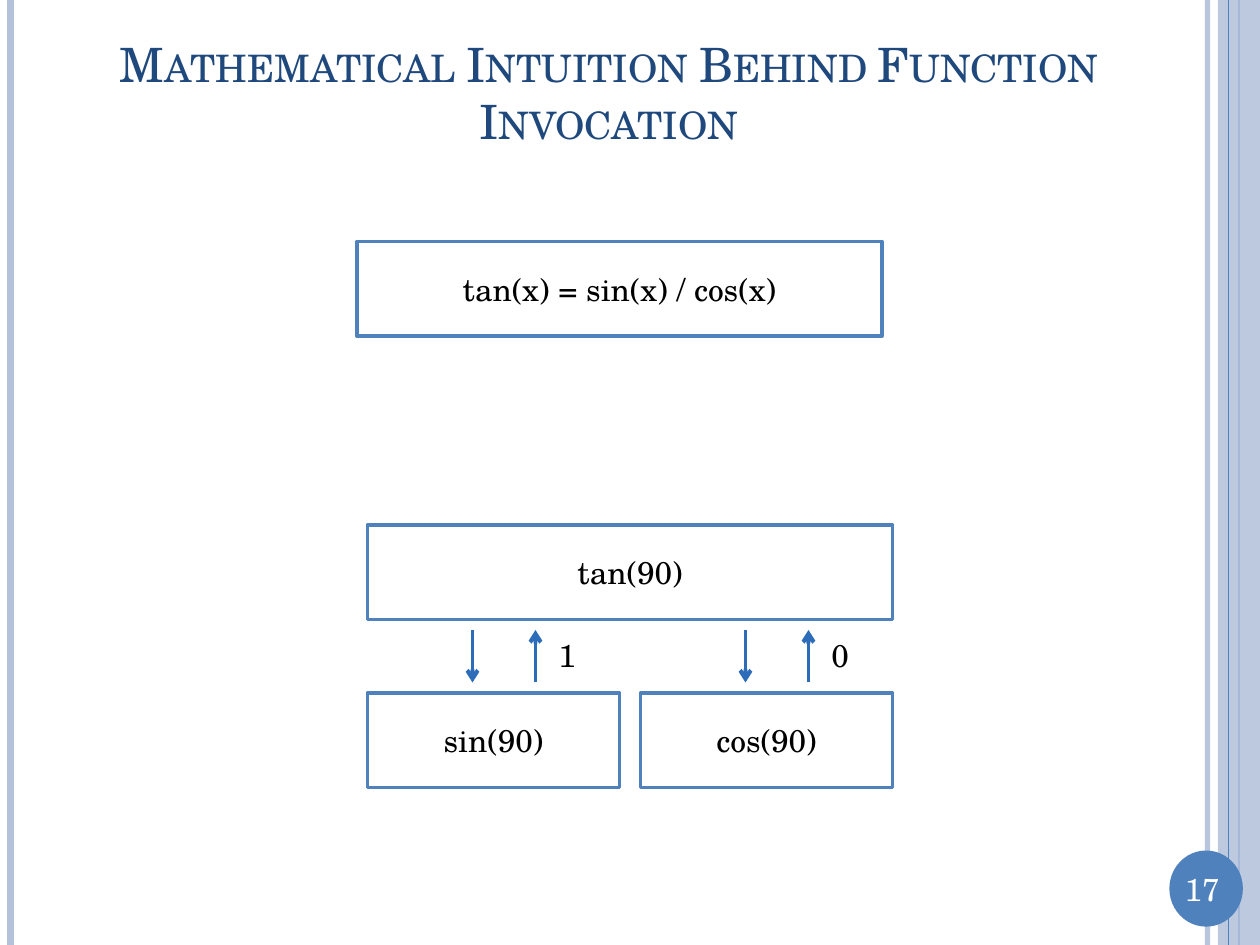
from dataclasses import dataclass

from pptx import Presentation
from pptx.dml.color import RGBColor
from pptx.enum.shapes import MSO_CONNECTOR, MSO_SHAPE
from pptx.enum.text import MSO_ANCHOR, PP_ALIGN
from pptx.oxml.ns import qn
from pptx.oxml.xmlchemy import OxmlElement
from pptx.util import Pt

EMU_PER_PX = 9525
WIDTH, HEIGHT = 960, 720


@dataclass(frozen=True)
class Theme:
    font: str = "TeX Gyre Schola"
    title_size: int = 27
    body_size: int = 18
    title: str = "1F497D"
    text: str = "000000"
    paper: str = "FFFFFF"
    accent: str = "4F81BD"
    pale: str = "B3C1DB"
    arrow: str = "2C6CB9"


THEME = Theme()


def px(*lengths):
    return [length * EMU_PER_PX for length in lengths]


def set_alpha(fill, percent):
    """Make a solid fill see-through; percent is its opacity."""
    alpha = OxmlElement("a:alpha")
    alpha.set("val", str(percent * 1000))
    fill._xPr.find(qn("a:solidFill"))[0].append(alpha)


def write(shape, text, color=THEME.text, size=THEME.body_size, align=PP_ALIGN.CENTER):
    frame = shape.text_frame
    frame.word_wrap = True
    paragraph = frame.paragraphs[0]
    paragraph.text = text
    paragraph.alignment = align
    font = paragraph.font
    font.name, font.size = THEME.font, Pt(size)
    font.color.rgb = RGBColor.from_string(color)
    return paragraph


def add_text(slide, box, text, **style):
    shape = slide.shapes.add_textbox(*px(*box))
    write(shape, text, **style)
    return shape


def add_filled(slide, kind, box, color):
    shape = slide.shapes.add_shape(kind, *px(*box))
    shape.shadow.inherit = False
    shape.fill.solid()
    shape.fill.fore_color.rgb = RGBColor.from_string(color)
    shape.line.fill.background()
    return shape


def add_box(slide, box, text):
    shape = add_filled(slide, MSO_SHAPE.RECTANGLE, box, THEME.paper)
    shape.line.color.rgb = RGBColor.from_string(THEME.accent)
    shape.line.width = Pt(2)
    shape.text_frame.vertical_anchor = MSO_ANCHOR.MIDDLE
    write(shape, text)


def add_line(slide, start, end, color, width):
    line = slide.shapes.add_connector(MSO_CONNECTOR.STRAIGHT, *px(*start, *end))
    line.line.color.rgb = RGBColor.from_string(color)
    line.line.width = Pt(width)
    line._element.spPr.append(OxmlElement("a:effectLst"))
    return line


def add_stripe(slide, x, color, width):
    return add_line(slide, (x, 0), (x, HEIGHT), color, width)


def add_arrow(slide, start, end):
    arrow = add_line(slide, start, end, THEME.arrow, 2.25)
    head = OxmlElement("a:tailEnd")
    head.set("type", "arrow")
    arrow.line._get_or_add_ln().append(head)


def add_frame(slide, number):
    """Draw the side stripes and the page number badge."""
    set_alpha(add_stripe(slide, 920, THEME.pale, 3).line.fill, 93)
    add_stripe(slide, 8, THEME.pale, 4.5)
    add_stripe(slide, 944, THEME.accent, 1.5)
    band = add_filled(slide, MSO_SHAPE.RECTANGLE, (928, 0, 32, HEIGHT), THEME.pale)
    set_alpha(band.fill, 87)
    add_stripe(slide, 936, THEME.accent, 0.75)
    add_filled(slide, MSO_SHAPE.OVAL, (891, 648, 56, 58), THEME.accent)
    add_text(slide, (888, 658, 56, 38), number, color=THEME.paper)


def add_title(slide, text):
    shape = slide.shapes.add_textbox(*px(48, 29, 832, 83))
    shape.text_frame.vertical_anchor = MSO_ANCHOR.MIDDLE
    paragraph = write(shape, text, THEME.title, THEME.title_size)
    paragraph._p.pPr.find(qn("a:defRPr")).set("cap", "small")


def add_call(slide, left, text, result):
    """Draw a called function, the arrows to and from it, and its result."""
    add_box(slide, (left, 528, 192, 72), text)
    add_arrow(slide, (left + 80, 480), (left + 80, 520))
    add_arrow(slide, (left + 128, 520), (left + 128, 480))
    add_text(slide, (left + 136, 480, 32, 38), result, align=PP_ALIGN.LEFT)


def main():
    presentation = Presentation()
    presentation.slide_width, presentation.slide_height = px(WIDTH, HEIGHT)
    slide = presentation.slides.add_slide(presentation.slide_layouts[6])
    add_frame(slide, "17")
    add_title(slide, "Mathematical Intuition Behind Function Invocation")
    add_box(slide, (272, 184, 400, 72), "tan(x) = sin(x) / cos(x)")
    add_box(slide, (280, 400, 400, 72), "tan(90)")
    add_call(slide, 280, "sin(90)", "1")
    add_call(slide, 488, "cos(90)", "0")
    presentation.save("out.pptx")


if __name__ == "__main__":
    main()
